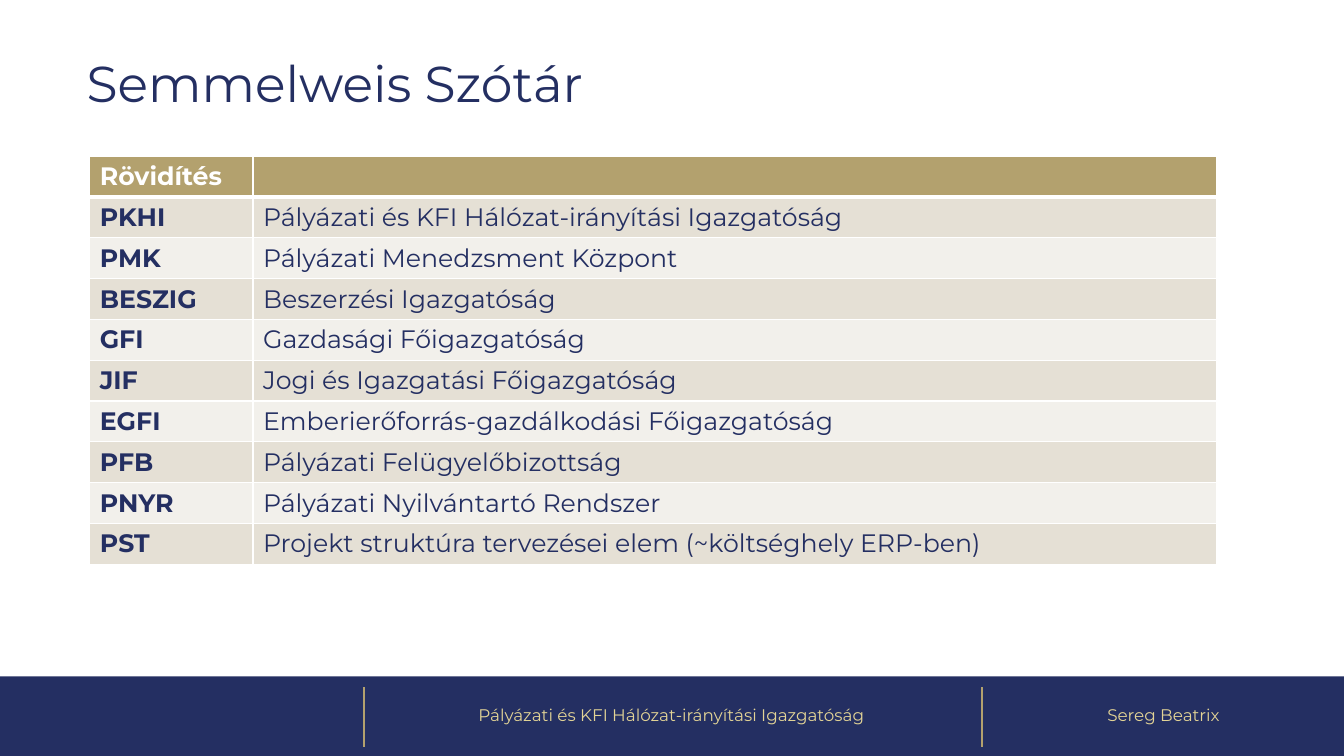
from lxml.etree import SubElement
from pptx import Presentation
from pptx.dml.color import RGBColor
from pptx.enum.shapes import MSO_CONNECTOR, MSO_SHAPE
from pptx.enum.text import MSO_ANCHOR, PP_ALIGN
from pptx.oxml.ns import qn
from pptx.util import Inches, Pt

TITLE = "Semmelweis Szótár"
ROWS = [
    ("Rövidítés", ""),
    ("PKHI", "Pályázati és KFI Hálózat-irányítási Igazgatóság"),
    ("PMK", "Pályázati Menedzsment Központ"),
    ("BESZIG", "Beszerzési Igazgatóság"),
    ("GFI", "Gazdasági Főigazgatóság"),
    ("JIF", "Jogi és Igazgatási Főigazgatóság"),
    ("EGFI", "Emberierőforrás-gazdálkodási Főigazgatóság"),
    ("PFB", "Pályázati Felügyelőbizottság"),
    ("PNYR", "Pályázati Nyilvántartó Rendszer"),
    ("PST", "Projekt struktúra tervezései elem (~költséghely ERP-ben)"),
]
# text, left, width
FOOTER = [
    ("Pályázati és KFI Hálózat-irányítási Igazgatóság", 3.59, 6.14),
    ("Sereg Beatrix", 9.74, 3.6),
]
DIVIDERS = [3.61, 9.74]
COLUMNS = [1.62, 9.56]
ROW_H = 0.405
FOOTER_TOP, FOOTER_H = 6.71, 0.79
FONT = "Montserrat"
COLORS = {"navy": "242F62", "gold": "B3A16E", "pale_gold": "E3D496",
          "white": "FFFFFF", "odd": "E5E0D5", "even": "F2F0EB"}


def rgb(name):
    return RGBColor.from_string(COLORS[name])


def write(tf, text, size, color, bold=False, align=PP_ALIGN.LEFT, spacing=None):
    tf.word_wrap = True
    tf.text = text
    p = tf.paragraphs[0]
    p.alignment = align
    p.line_spacing = spacing
    for r in p.runs:
        r.font.name = FONT
        r.font.size = Pt(size)
        r.font.bold = bold
        r.font.color.rgb = rgb(color)


def add_borders(cell, **widths):
    """Draw white cell borders, with widths in points keyed by L, R, T, B."""
    tcPr = cell._tc.get_or_add_tcPr()
    for side in "LRTB":
        ln = SubElement(tcPr, qn(f"a:ln{side}"), w=str(Pt(widths.get(side, 1))))
        fill = SubElement(ln, qn("a:solidFill"))
        SubElement(fill, qn("a:srgbClr"), val=COLORS["white"])


def add_footer(s, slide_width):
    band = s.shapes.add_shape(MSO_SHAPE.RECTANGLE, 0, Inches(FOOTER_TOP),
                              slide_width, Inches(FOOTER_H))
    band.shadow.inherit = False
    band.fill.solid()
    band.fill.fore_color.rgb = rgb("navy")
    band.line.fill.background()
    for x in DIVIDERS:
        line = s.shapes.add_connector(MSO_CONNECTOR.STRAIGHT, Inches(x), Inches(6.82),
                                      Inches(x), Inches(7.41))
        line.line.color.rgb = rgb("gold")
        line.line.width = Pt(1.5)
        SubElement(line._element.spPr, qn("a:effectLst"))
    for text, left, width in FOOTER:
        box = s.shapes.add_textbox(Inches(left), Inches(FOOTER_TOP),
                                   Inches(width), Inches(FOOTER_H))
        box.text_frame.vertical_anchor = MSO_ANCHOR.MIDDLE
        write(box.text_frame, text, 12, "pale_gold", align=PP_ALIGN.CENTER, spacing=0.9)


def add_glossary(s):
    table = s.shapes.add_table(len(ROWS), len(COLUMNS), Inches(0.89), Inches(1.55),
                               Inches(sum(COLUMNS)), Inches(ROW_H * len(ROWS))).table
    for column, width in zip(table.columns, COLUMNS):
        column.width = Inches(width)
    for i, row in enumerate(ROWS):
        table.rows[i].height = Inches(ROW_H)
        fill = "gold" if i == 0 else "odd" if i % 2 else "even"
        for j, text in enumerate(row):
            cell = table.cell(i, j)
            add_borders(cell, T=3 if i == 1 else 1, B=3 if i == 0 else 1)
            cell.fill.solid()
            cell.fill.fore_color.rgb = rgb(fill)
            write(cell.text_frame, text, 18, "navy" if i else "white", bold=j == 0)


def main():
    prs = Presentation()
    prs.slide_width, prs.slide_height = Inches(13.33), Inches(7.5)
    s = prs.slides.add_slide(prs.slide_layouts[5])
    add_footer(s, prs.slide_width)
    title = s.shapes.title
    title.left, title.top = Inches(0.76), Inches(0.2)
    title.width, title.height = Inches(12.01), Inches(1.32)
    title.text_frame.vertical_anchor = MSO_ANCHOR.MIDDLE
    write(title.text_frame, TITLE, 36, "navy", spacing=0.9)
    add_glossary(s)
    prs.save("out.pptx")


if __name__ == "__main__":
    main()
